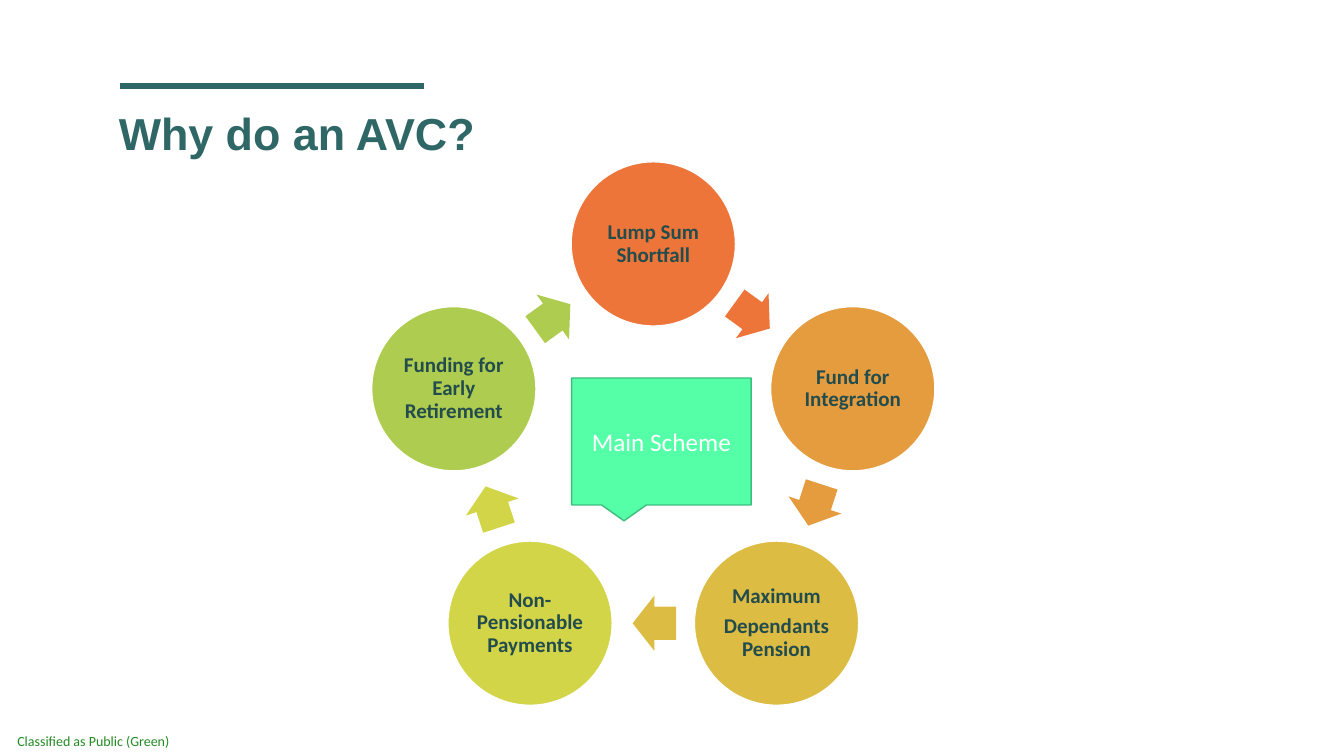
from dataclasses import dataclass
from math import cos, radians, sin

from lxml.etree import SubElement
from pptx import Presentation
from pptx.dml.color import RGBColor
from pptx.enum.shapes import MSO_CONNECTOR, MSO_SHAPE
from pptx.enum.text import MSO_ANCHOR, PP_ALIGN
from pptx.oxml.ns import qn
from pptx.util import Inches, Pt


@dataclass(frozen=True)
class Theme:
    teal: str = "2F6666"
    dark: str = "234C4C"
    white: str = "FFFFFF"
    green: str = "228B22"
    mint: str = "54FFA8"
    edge: str = "3EBD7C"
    head: str = "Arial"
    body: str = "Calibri"
    title: float = 32
    main: float = 18
    node: float = 15
    foot: float = 10


THEME = Theme()
STEPS = [
    ("Lump Sum Shortfall", "ED753A"),
    ("Fund for Integration", "E59C3F"),
    ("Maximum\nDependants Pension", "DDBC44"),
    ("Non-Pensionable Payments", "D3D549"),
    ("Funding for Early Retirement", "AECC4F"),
]
MID_X, MID_Y, RADIUS = 6.48, 4.5, 2.08
NODE, ARROW_W, ARROW_H, BACK = 1.63, 0.43, 0.55, 0.01


def apply(target, values):
    for name, value in values.items():
        setattr(target, name, value)


def write(shape, text, size, color, font=THEME.body, bold=False, inset=None,
          anchor=MSO_ANCHOR.MIDDLE, **para):
    frame = shape.text_frame
    apply(frame, {"word_wrap": True, "vertical_anchor": anchor})
    if inset is not None:
        for side in ("left", "top", "right", "bottom"):
            setattr(frame, f"margin_{side}", Inches(inset))
    frame.text = text
    for item in frame.paragraphs:
        apply(item, {"alignment": PP_ALIGN.CENTER, **para})
        apply(item.font, {"name": font, "size": Pt(size), "bold": bold})
        item.font.color.rgb = RGBColor.from_string(color)


def add_text(slide, box, text, size, color, **style):
    label = slide.shapes.add_textbox(*map(Inches, box))
    write(label, text, size, color, **style)


def add_form(slide, kind, box, fill, line=None):
    form = slide.shapes.add_shape(kind, *map(Inches, box))
    form.shadow.inherit = False
    form.fill.solid()
    form.fill.fore_color.rgb = RGBColor.from_string(fill)
    if line:
        form.line.color.rgb = RGBColor.from_string(line)
        form.line.width = Pt(1)
    else:
        form.line.fill.background()
    return form


def add_rule(slide, left, right, top):
    rule = slide.shapes.add_connector(
        MSO_CONNECTOR.STRAIGHT, *map(Inches, (left, top, right, top)))
    rule.line.color.rgb = RGBColor.from_string(THEME.teal)
    rule.line.width = Pt(4.5)
    SubElement(rule._element.spPr, qn("a:effectLst"))


def polar(angle, reach):
    turn = radians(angle)
    return MID_X + reach * sin(turn), MID_Y - reach * cos(turn)


def center(x, y, width, height):
    return x - width / 2, y - height / 2, width, height


def add_node(slide, angle, text, fill):
    box = center(*polar(angle, RADIUS), NODE, NODE)
    node = add_form(slide, MSO_SHAPE.OVAL, box, fill, THEME.white)
    write(node, text, THEME.node, THEME.dark, bold=True, inset=0.02,
          line_spacing=0.9, space_after=Pt(5.25))


def add_arrow(slide, angle, half, fill):
    x, y = polar(angle, RADIUS * cos(radians(half)))
    x -= BACK * cos(radians(angle))
    y -= BACK * sin(radians(angle))
    box = center(x, y, ARROW_W, ARROW_H)
    arrow = add_form(slide, MSO_SHAPE.RIGHT_ARROW, box, fill)
    arrow.adjustments[0] = 0.6
    arrow.adjustments[1] = 0.5
    arrow.rotation = angle


def add_cycle(slide):
    step = 360 / len(STEPS)
    for index, (text, fill) in enumerate(STEPS):
        angle = index * step
        add_node(slide, angle, text, fill)
        add_arrow(slide, angle + step / 2, step / 2, fill)


def main():
    deck = Presentation()
    apply(deck, {"slide_width": Inches(13.33), "slide_height": Inches(7.5)})
    slide = deck.slides.add_slide(deck.slide_layouts[6])
    add_text(slide, (0, 7.21, 1.85, 0.29), "Classified as Public (Green)",
             THEME.foot, THEME.green, inset=0)
    add_rule(slide, 1.19, 4.21, 0.85)
    add_text(slide, (1.08, 1.06, 11.5, 0.78), "Why do an AVC?",
             THEME.title, THEME.teal, font=THEME.head, bold=True,
             anchor=MSO_ANCHOR.TOP, alignment=PP_ALIGN.LEFT, line_spacing=0.9)
    add_cycle(slide)
    scheme = add_form(slide, MSO_SHAPE.RECTANGULAR_CALLOUT,
                      (5.67, 3.75, 1.78, 1.26), THEME.mint, THEME.edge)
    write(scheme, "Main Scheme", THEME.main, THEME.white)
    deck.save("out.pptx")


if __name__ == "__main__":
    main()
